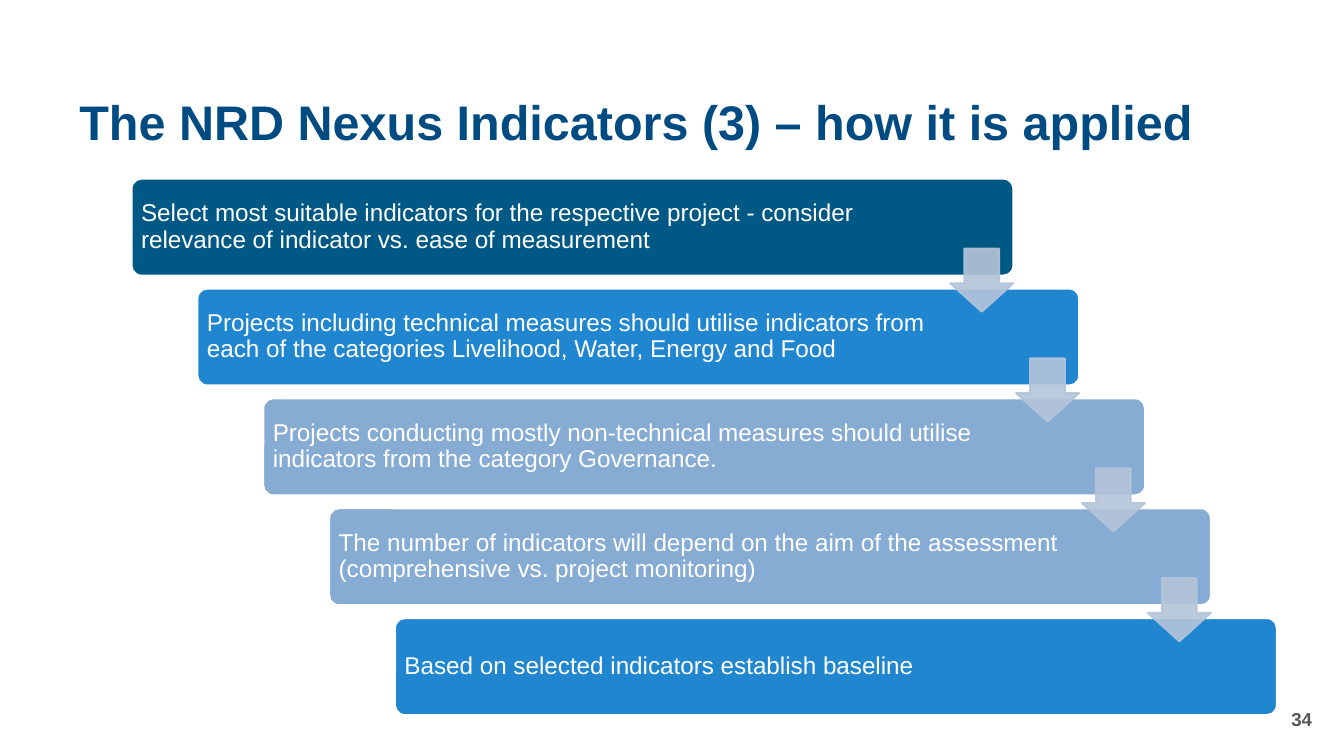
from lxml import etree
from pptx import Presentation
from pptx.dml.color import RGBColor
from pptx.enum.shapes import MSO_SHAPE
from pptx.enum.text import MSO_ANCHOR, PP_ALIGN
from pptx.oxml.ns import qn
from pptx.util import Inches, Pt

ROUND, ARROW = MSO_SHAPE.ROUNDED_RECTANGLE, MSO_SHAPE.DOWN_ARROW
MIDDLE = MSO_ANCHOR.MIDDLE
LEFT, RIGHT = PP_ALIGN.LEFT, PP_ALIGN.RIGHT

COLORS = {"title": "004C82", "dark": "005884", "blue": "2086CF", "pale": "86ACD3",
          "arrow": "B4C4D9", "white": "FFFFFF", "grey": "575756"}

STEPS = [
    ("Select most suitable indicators for the respective project - consider "
     "relevance of indicator vs. ease of measurement", "dark"),
    ("Projects including technical measures should utilise indicators from "
     "each of the categories Livelihood, Water, Energy and Food", "blue"),
    ("Projects conducting mostly non-technical measures should utilise "
     "indicators from the category Governance.", "pale"),
    ("The number of indicators will depend on the aim of the assessment "
     "(comprehensive vs. project monitoring)", "pale"),
    ("Based on selected indicators establish baseline", "blue"),
]


def color(name):
    """Return the named colour."""
    return RGBColor.from_string(COLORS[name])


def write(shape, text, size, tint, bold=False, align=LEFT, space=0.9, pad=0.1):
    """Fill a shape with one formatted paragraph."""
    frame = shape.text_frame
    frame.word_wrap = True
    frame.vertical_anchor = MIDDLE
    frame.margin_left = frame.margin_right = Inches(pad)
    frame.margin_top = frame.margin_bottom = Inches(0.05)
    frame.text = text
    para = frame.paragraphs[0]
    para.alignment = align
    para.line_spacing = space
    font = para.font
    font.name, font.size, font.bold = "Arial", Pt(size), bold
    font.color.rgb = color(tint)


def add_shape(slide, kind, box, fill, line, ratios):
    """Add a flat preset shape with a thin outline."""
    shape = slide.shapes.add_shape(kind, *map(Inches, box))
    shape.shadow.inherit = False
    shape.fill.solid()
    shape.fill.fore_color.rgb = color(fill)
    shape.line.color.rgb = color(line)
    shape.line.width = Pt(1)
    for i, ratio in enumerate(ratios):
        shape.adjustments[i] = ratio
    return shape


def add_title(slide, box, text):
    """Place and format the title."""
    title = slide.shapes.title
    title.left, title.top, title.width, title.height = map(Inches, box)
    write(title, text, 26, "title", bold=True)


def add_step(slide, box, text, fill):
    """Draw one step bar and its label."""
    left, top, width, height = box
    add_shape(slide, ROUND, box, fill, "white", [0.1])
    label = slide.shapes.add_textbox(
        *map(Inches, (left + 0.02, top + 0.02, width - 1, height - 0.04)))
    write(label, text, 13, "white", pad=0.05)


def add_arrow(slide, box):
    """Draw a slightly transparent down arrow."""
    arrow = add_shape(slide, ARROW, box, "arrow", "arrow", [0.55, 0.45])
    for tone in arrow._element.spPr.iter(qn("a:srgbClr")):
        etree.SubElement(tone, qn("a:alpha"), val="90000")


def add_stairs(slide, box):
    """Lay out the descending steps, then the arrows between them."""
    left, top, width, height = box
    wide, high = 6.56, 0.72
    count = len(STEPS) - 1
    across, down = (width - wide) / count, (height - high) / count
    spots = [(left + i * across, top + i * down) for i in range(len(STEPS))]
    for (x, y), (text, fill) in zip(spots, STEPS):
        add_step(slide, (x, y, wide, high), text, fill)
    for x, y in spots[:-1]:
        add_arrow(slide, (x + 6.09, y + 0.52, 0.47, 0.47))


def add_number(slide, box, text):
    """Add the slide number."""
    label = slide.shapes.add_textbox(*map(Inches, box))
    write(label, text, 10, "grey", bold=True, align=RIGHT, space=1)


def main():
    """Build and save the slide."""
    deck = Presentation()
    deck.slide_width = Inches(10)
    deck.slide_height = deck.slide_width * 9 // 16
    slide = deck.slides.add_slide(deck.slide_layouts[5])
    add_title(slide, (0.49, 0.63, 9.37, 0.6),
              "The NRD Nexus Indicators (3) – how it is applied")
    add_stairs(slide, (0.98, 1.33, 8.52, 3.99))
    add_number(slide, (7.61, 5.2, 2.25, 0.3), "34")
    deck.save("out.pptx")


if __name__ == "__main__":
    main()
